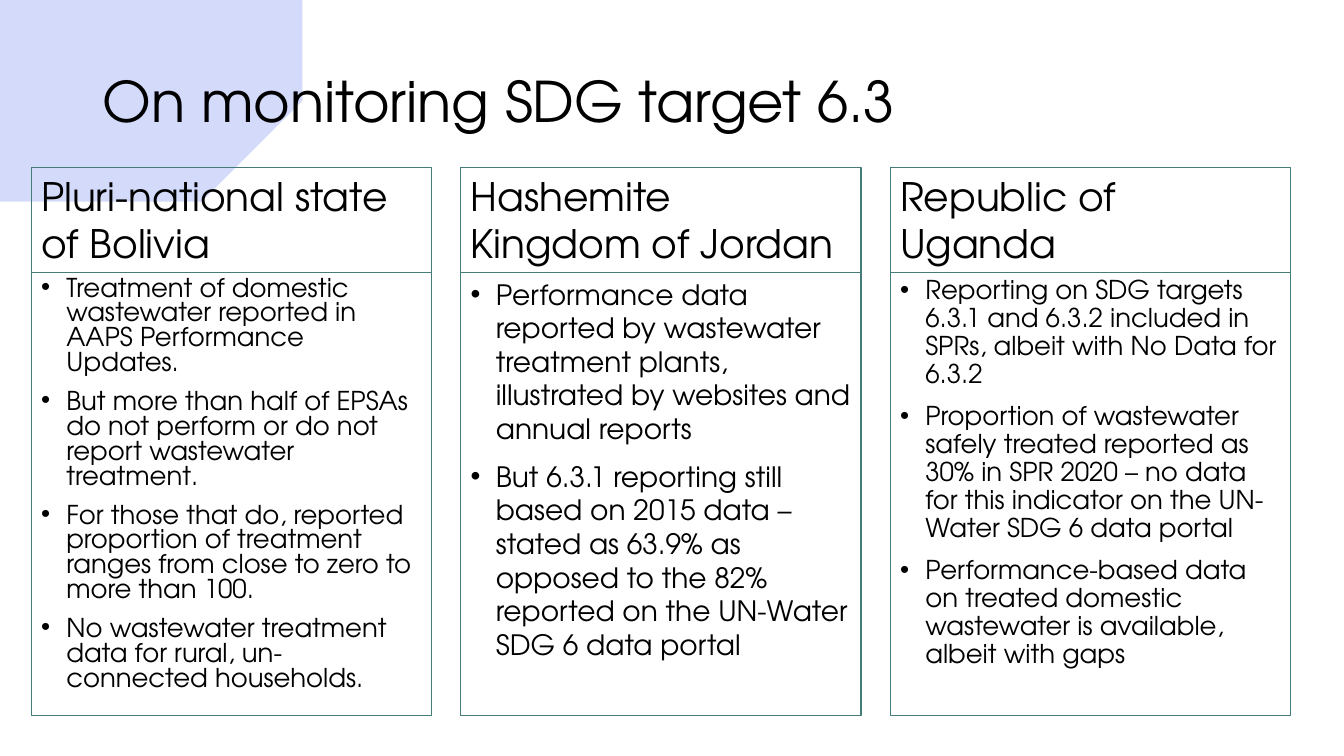
from lxml import etree
from pptx import Presentation
from pptx.dml.color import RGBColor
from pptx.enum.shapes import MSO_SHAPE
from pptx.enum.text import MSO_ANCHOR, MSO_AUTO_SIZE, PP_ALIGN
from pptx.oxml.ns import qn
from pptx.util import Inches, Pt

RECTANGLE = MSO_SHAPE.RECTANGLE
TOP, MIDDLE = MSO_ANCHOR.TOP, MSO_ANCHOR.MIDDLE
NO_FIT = MSO_AUTO_SIZE.NONE
LEFT = PP_ALIGN.LEFT

BLACK = RGBColor(0x00, 0x00, 0x00)
TEAL = RGBColor(0x45, 0x7C, 0x7A)
BLUE = RGBColor(0x29, 0x4F, 0xE7)
FONT = "TeX Gyre Adventor"

BRUSH_POINTS = [
    (0, 0.34), (0.06, 0.35), (0.25, 0.37), (0.66, 0.38), (1.02, 0.37),
    (1.51, 0.38), (1.94, 0.41), (2.48, 0.41), (2.66, 0.41), (2.8, 0.47),
    (2.71, 0.49), (2.55, 0.54), (2.53, 0.57), (2.56, 0.59), (2.62, 0.62),
    (2.46, 0.62), (2.38, 0.66), (2.46, 0.68), (2.56, 0.7), (2.66, 0.71),
    (2.75, 0.74), (2.51, 0.75), (2.63, 0.78), (2.73, 0.81), (2.8, 0.82),
    (2.88, 0.83), (2.9, 0.85), (2.87, 0.88), (2.84, 0.88), (2.63, 0.88),
    (2.96, 0.93), (3.3, 0.94), (3.21, 0.97), (3.18, 1.06), (3.07, 1.11),
    (3, 1.13), (2.83, 1.16), (2.8, 1.2), (2.78, 1.25), (2.74, 1.28),
    (3.08, 1.28), (2.69, 1.38), (2.73, 1.42), (2.52, 1.48), (2.63, 1.48),
    (2.35, 1.61), (1.97, 1.72), (1.5, 1.81), (1.02, 1.88), (0.65, 1.91),
    (0.23, 1.9), (0.07, 1.89), (0, 1.88),
]

COUNTRIES = [
    ("Pluri-national state of Bolivia", 18.5, 0.8, [
        "Treatment of domestic wastewater reported in AAPS Performance Updates.",
        "But more than half of EPSAs do not perform or do not report wastewater treatment.",
        "For those that do, reported proportion of treatment ranges from close to zero "
        "to more than 100.",
        "No wastewater treatment data for rural, un-connected households.",
    ]),
    ("Hashemite Kingdom of Jordan", 20, 1.0, [
        "Performance data reported by wastewater treatment plants, illustrated by "
        "websites and annual reports",
        "But 6.3.1 reporting still based on 2015 data – stated as 63.9% as opposed to "
        "the 82% reported on the UN-Water SDG 6 data portal",
    ]),
    ("Republic of Uganda", 18.5, 0.9, [
        "Reporting on SDG targets 6.3.1 and 6.3.2 included in SPRs, albeit with "
        "No Data for 6.3.2",
        "Proportion of wastewater safely treated reported as 30% in SPR 2020 – no data "
        "for this indicator on the UN-Water SDG 6 data portal",
        "Performance-based data on treated domestic wastewater is available, "
        "albeit with gaps",
    ]),
]


def add_span(para, text, size):
    para.alignment = LEFT
    span = para.add_run()
    span.text = text
    span.font.name = FONT
    span.font.size = Pt(size)
    span.font.color.rgb = BLACK


def add_box(left, top, height):
    box = page.shapes.add_shape(
        RECTANGLE, Inches(left), Inches(top), Inches(3.97), Inches(height))
    box.shadow.inherit = False
    box.fill.background()
    box.line.color.rgb = TEAL
    box.line.width = Pt(0.75)
    box.text_frame.word_wrap = True
    box.text_frame.vertical_anchor = TOP
    return box.text_frame


deck = Presentation()
deck.slide_width, deck.slide_height = Inches(13.33), Inches(7.5)
page = deck.slides.add_slide(deck.slide_layouts[5])

builder = page.shapes.build_freeform(
    *BRUSH_POINTS[0], scale=Inches(1))
builder.add_line_segments(BRUSH_POINTS[1:], close=True)
brush = builder.convert_to_shape()
brush.shadow.inherit = False
brush.line.fill.background()
brush.fill.solid()
brush.fill.fore_color.rgb = BLUE
color = brush.fill._xPr.find(qn("a:solidFill"))[0]
etree.SubElement(color, qn("a:alpha"), val="20000")

title = page.shapes.title
title._element.addprevious(brush._element)
title.left, title.top = Inches(0.92), Inches(0.31)
title.width, title.height = Inches(11.5), Inches(1.45)
title.text_frame.vertical_anchor = MIDDLE
title.text_frame.auto_size = NO_FIT
title.text_frame.word_wrap = True
heading = title.text_frame.paragraphs[0]
heading.line_spacing = 0.9
add_span(heading, "On monitoring SDG target 6.3", 40)

for column, (country, size, spacing, findings) in enumerate(COUNTRIES):
    left = 0.31 + 4.26 * column
    body = add_box(left, 2.7, 4.4)
    for index, finding in enumerate(findings):
        para = body.paragraphs[0] if index == 0 else body.add_paragraph()
        para.line_spacing = spacing
        para.space_before = Pt(10)
        add_span(para, finding, size)
        properties = para._p.get_or_add_pPr()
        properties.set("marL", str(Inches(0.25)))
        properties.set("indent", str(Inches(-0.25)))
        etree.SubElement(properties, qn("a:buFont"), typeface="Arial")
        etree.SubElement(properties, qn("a:buChar"), char="•")
    header = add_box(left, 1.66, 1.04)
    add_span(header.paragraphs[0], country, 28)

deck.save("out.pptx")
